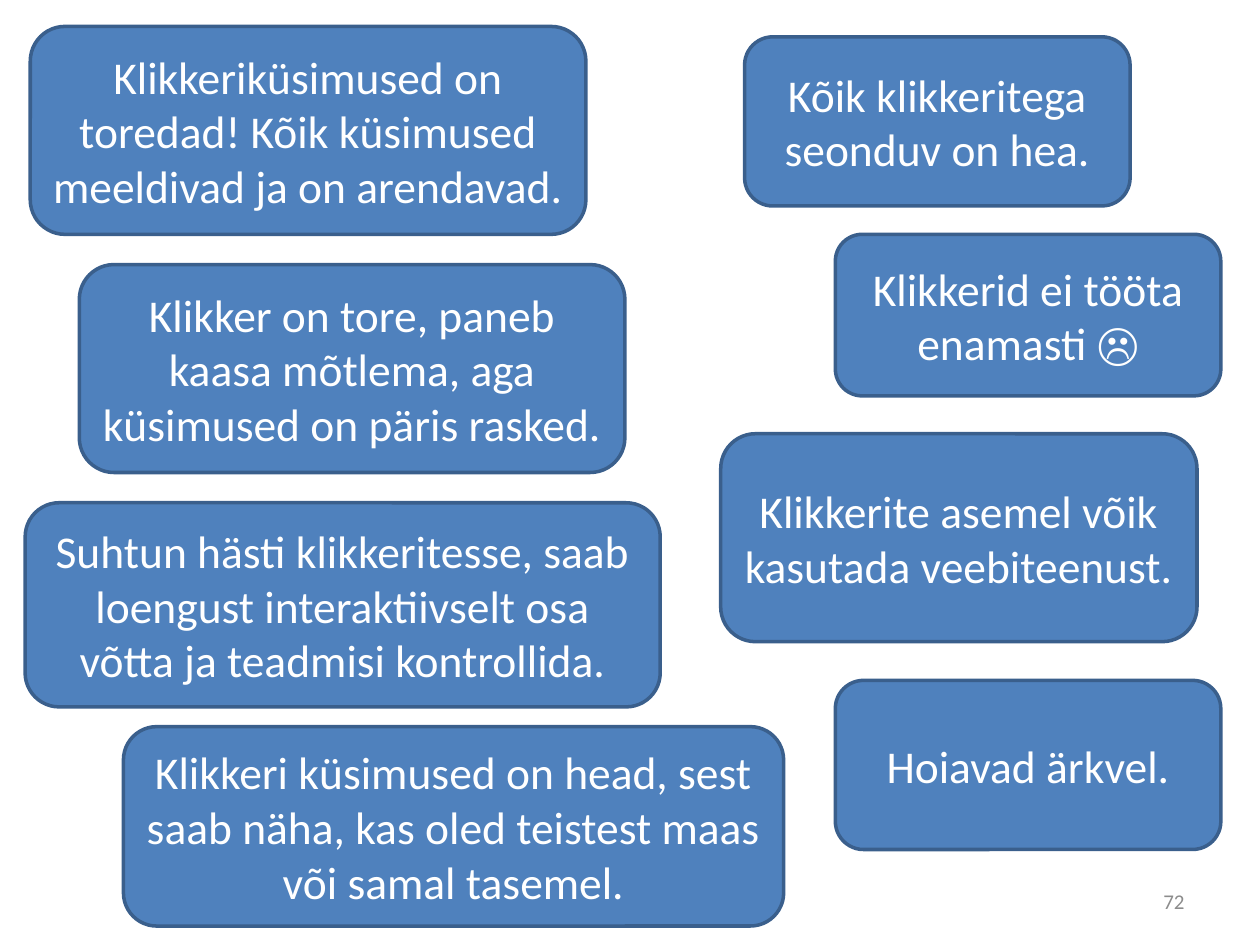
import pptx
import pptx.dml.color
import pptx.enum.shapes
import pptx.enum.text
import pptx.util
from dataclasses import dataclass

Align = pptx.enum.text.PP_ALIGN


@dataclass(frozen=True)
class Theme:
    font: str = "Calibri"
    fill: str = "4F81BD"
    line: str = "3A5F8C"
    text: str = "FFFFFF"
    muted: str = "8C8C8C"
    quote_size: int = 26
    number_size: int = 12
    line_width: int = 2


THEME = Theme()
WIDTH, HEIGHT = 10, 7.5

# Each box: left, top, width, height in percent of the slide's width or height
LEFT_QUOTES = [
    ("Klikkeriküsimused on toredad! Kõik küsimused meeldivad ja on arendavad.",
     (2.4, 2.8, 44.1, 22)),
    ("Klikker on tore, paneb kaasa mõtlema, aga küsimused on päris rasked.",
     (6.3, 28, 43.3, 22)),
    ("Suhtun hästi klikkeritesse, saab loengust interaktiivselt osa võtta "
     "ja teadmisi kontrollida.",
     (2, 53.2, 50.4, 21.6)),
    ("Klikkeri küsimused on head, sest saab näha, kas oled teistest maas "
     "või samal tasemel.",
     (9.8, 76.9, 52.4, 21.1)),
]
RIGHT_QUOTES = [
    ("Kõik klikkeritega seonduv on hea.", (59.1, 3.9, 30.6, 17.9)),
    ("Klikkerid ei tööta enamasti ☹", (66.3, 24.8, 30.6, 17.1)),
    ("Klikkerite asemel võik kasutada veebiteenust.", (57.2, 45.9, 37.8, 22)),
    ("Hoiavad ärkvel.", (66.3, 72, 30.6, 17.9)),
]
PAGE_NUMBER = ("72", (71.7, 92.7, 23.3, 5.3))


def rgb(code):
    return pptx.dml.color.RGBColor.from_string(code)


def place(box):
    """Turn percent shares into slide lengths."""
    return [pptx.util.Inches(share * side / 100)
            for share, side in zip(box, (WIDTH, HEIGHT) * 2)]


def write(sp, text, size, color, align):
    tf = sp.text_frame
    tf.text = text
    tf.word_wrap = True
    tf.vertical_anchor = pptx.enum.text.MSO_ANCHOR.MIDDLE
    p = tf.paragraphs[0]
    p.alignment = align
    font = p.runs[0].font
    font.name = THEME.font
    font.size = pptx.util.Pt(size)
    font.color.rgb = rgb(color)


def add_quote(s, text, box):
    sp = s.shapes.add_shape(
        pptx.enum.shapes.MSO_SHAPE.ROUNDED_RECTANGLE, *place(box))
    sp.shadow.inherit = False
    sp.fill.solid()
    sp.fill.fore_color.rgb = rgb(THEME.fill)
    sp.line.color.rgb = rgb(THEME.line)
    sp.line.width = pptx.util.Pt(THEME.line_width)
    write(sp, text, THEME.quote_size, THEME.text, Align.CENTER)


def main():
    prs = pptx.Presentation()
    prs.slide_width = pptx.util.Inches(WIDTH)
    prs.slide_height = pptx.util.Inches(HEIGHT)
    s = prs.slides.add_slide(prs.slide_layouts[6])

    number, box = PAGE_NUMBER
    write(s.shapes.add_textbox(*place(box)), number,
          THEME.number_size, THEME.muted, Align.RIGHT)
    for text, box in LEFT_QUOTES + RIGHT_QUOTES:
        add_quote(s, text, box)

    prs.save("out.pptx")


if __name__ == "__main__":
    main()
